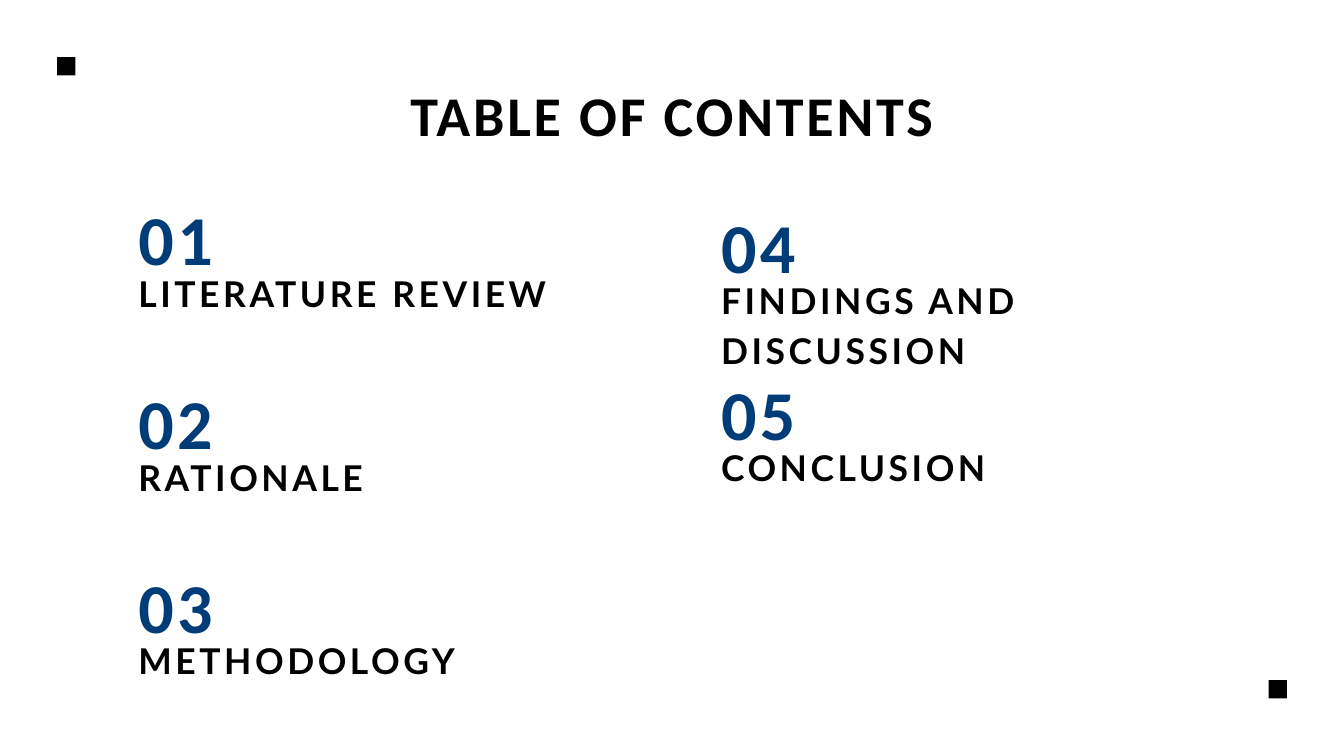
from dataclasses import dataclass

from pptx import Presentation
from pptx.dml.color import RGBColor as Rgb
from pptx.enum.shapes import MSO_SHAPE as Kind
from pptx.enum.text import MSO_AUTO_SIZE as Fit, PP_ALIGN as Align
from pptx.util import Pt

INK = {"black": "000000", "blue": "003C78", "white": "FFFFFF"}


@dataclass(frozen=True)
class Style:
    font: str
    size: float
    lead: float
    track: float
    ink: str
    high: float
    align: Align = Align.LEFT


@dataclass(frozen=True)
class Entry:
    num: str
    label: str
    left: float
    top: float
    wide: float = 376


HEAD = Style("Calibri", 60, 84, 3, "black", 85, Align.CENTER)
NUM = Style("Calibri", 75, 105, 3.7, "blue", 103.7)
LABEL = Style("Lato", 38, 53.2, 3.8, "black", 51.8)

# Two columns; the left one has an even row pitch
LEFT, RIGHT = 148.3, 772.6
TOP, PITCH = 195, 197
DROP = 88.6  # from number to label
SIDE = 19.6  # corner square

ENTRIES = [
    Entry("01", "LITERATURE REVIEW", LEFT, TOP, 461),
    Entry("02", "RATIONALE", LEFT, TOP + PITCH),
    Entry("03", "METHODOLOGY", LEFT, TOP + 2 * PITCH),
    Entry("04", "FINDINGS AND DISCUSSION", RIGHT, 203, 586),
    Entry("05", "CONCLUSION", RIGHT, 381.6),
]
CORNERS = [(61.2, 61.2), (1359.3, 728.8)]


def add_text(slide, text: str, left: float, top: float, wide: float,
             style: Style) -> None:
    box = slide.shapes.add_textbox(Pt(left), Pt(top), Pt(wide), Pt(style.high))
    frame = box.text_frame
    frame.margin_left = frame.margin_top = 0
    frame.margin_right = frame.margin_bottom = 0
    frame.word_wrap = True
    frame.auto_size = Fit.SHAPE_TO_FIT_TEXT
    frame.text = text
    para = frame.paragraphs[0]
    para.alignment = style.align
    para.line_spacing = Pt(style.lead)
    run = para.runs[0]
    run.font.name = style.font
    run.font.size = Pt(style.size)
    run.font.bold = True
    run.font.color.rgb = Rgb.from_string(INK[style.ink])
    # Letter spacing, in hundredths of a point
    run.font._element.set("spc", str(round(style.track * 100)))


def add_entry(slide, item: Entry) -> None:
    add_text(slide, item.num, item.left, item.top, item.wide, NUM)
    add_text(slide, item.label, item.left, item.top + DROP, item.wide, LABEL)


def add_square(slide, left: float, top: float) -> None:
    square = slide.shapes.add_shape(
        Kind.RECTANGLE, Pt(left), Pt(top), Pt(SIDE), Pt(SIDE))
    square.shadow.inherit = False
    square.fill.solid()
    square.fill.fore_color.rgb = Rgb.from_string(INK["black"])
    square.line.fill.background()


def main() -> None:
    deck = Presentation()
    deck.slide_width, deck.slide_height = Pt(1440), Pt(810)
    slide = deck.slides.add_slide(deck.slide_layouts[6])
    slide.background.fill.solid()
    slide.background.fill.fore_color.rgb = Rgb.from_string(INK["white"])

    # Heading
    add_text(slide, "TABLE OF CONTENTS", LEFT, 74.2, 1143.4, HEAD)

    # Numbered contents
    for item in ENTRIES:
        add_entry(slide, item)

    # Corner squares
    for left, top in CORNERS:
        add_square(slide, left, top)

    deck.save("out.pptx")


if __name__ == "__main__":
    main()
